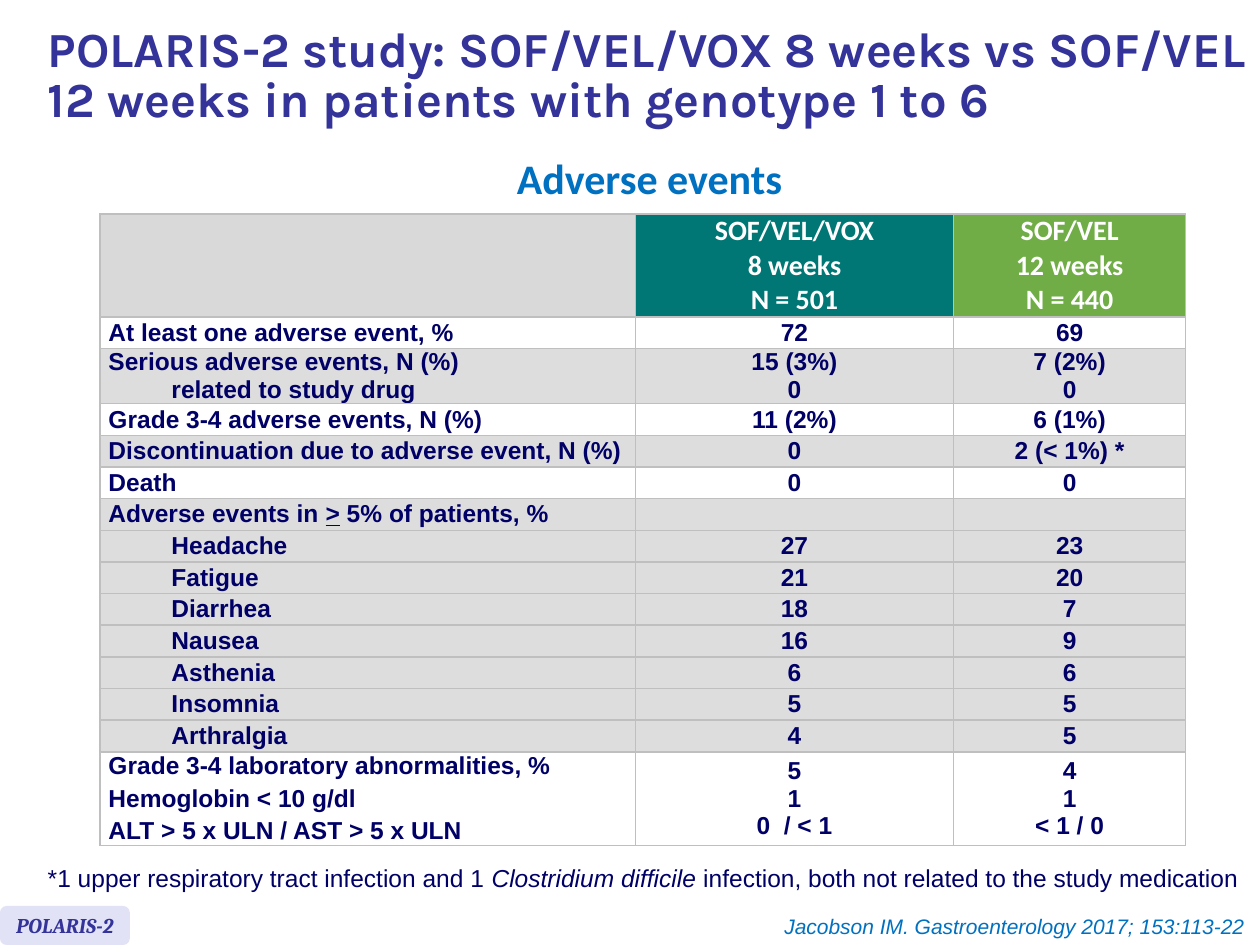
from lxml import etree
from pptx import Presentation
from pptx.dml.color import RGBColor
from pptx.enum import shapes, text
from pptx.oxml.ns import qn
from pptx.util import Pt

NAVY, INDIGO, BLUE, WHITE = "000066", "333399", "0070C0", "FFFFFF"
GREY, HEAD_GREY, BORDER = "DDDDDD", "D9D9D9", "BFBFBF"
LEFT, CENTER, RIGHT = text.PP_ALIGN.LEFT, text.PP_ALIGN.CENTER, text.PP_ALIGN.RIGHT

TITLE = "POLARIS-2 study: SOF/VEL/VOX 8 weeks vs SOF/VEL 12 weeks in patients with genotype 1 to 6"
SUBTITLE = "Adverse events"
FOOTNOTE = [
    "*1 upper respiratory tract infection and 1 ",
    ("Clostridium difficile", "italic"),
    " infection, both not related to the study medication",
]
STUDY = "POLARIS-2"
SOURCE = "Jacobson IM. Gastroenterology 2017; 153:113-22"

HEADER = [
    ([], HEAD_GREY),
    (["SOF/VEL/VOX", "8 weeks", "N = 501"], "007774"),
    (["SOF/VEL", "12 weeks", "N = 440"], "70AD47"),
]
SYMPTOMS = [
    ("Headache", "27", "23"),
    ("Fatigue", "21", "20"),
    ("Diarrhea", "18", "7"),
    ("Nausea", "16", "9"),
    ("Asthenia", "6", "6"),
    ("Insomnia", "5", "5"),
    ("Arthralgia", "4", "5"),
]
ROWS = [
    (WHITE, ["At least one adverse event, %"], ["72"], ["69"]),
    (GREY, ["Serious adverse events, N (%)", "\trelated to study drug"], ["15 (3%)", "0"], ["7 (2%)", "0"]),
    (WHITE, ["Grade 3-4 adverse events, N (%)"], ["11 (2%)"], ["6 (1%)"]),
    (GREY, ["Discontinuation due to adverse event, N (%)"], ["0"], ["2 (< 1%) *"]),
    (WHITE, ["Death"], ["0"], ["0"]),
    (GREY, [["Adverse events in ", (">", "underline"), " 5% of patients, %"]], [], []),
    *[(GREY, ["\t" + name], [a], [b]) for name, a, b in SYMPTOMS],
    (WHITE, ["Grade 3-4 laboratory abnormalities, %", "Hemoglobin < 10 g/dl",
             "ALT > 5 x ULN / AST > 5 x ULN"], ["5", "1", "0  / < 1"], ["4", "1", "< 1 / 0"]),
]
COL_WIDTHS = [306, 182, 132.5]
HEADER_HEIGHT = 58.6
ROW_HEIGHTS = {1: 18.1, 2: 31.4, 3: 53.5}


def rgb(value):
    return RGBColor.from_string(value)


def write(p, content, font, size, color, bold=False, italic=False, align=LEFT):
    p.alignment = align
    for part in [content] if isinstance(content, str) else content:
        words, style = part if isinstance(part, tuple) else (part, None)
        r = p.add_run()
        r.text = words
        f = r.font
        f.name, f.size, f.bold, f.italic = font, Pt(size), bold, italic
        f.color.rgb = rgb(color)
        if style:
            setattr(f, style, True)


def add_text(s, box, content, wrap, *style, **options):
    tf = s.shapes.add_textbox(*map(Pt, box)).text_frame
    tf.word_wrap = wrap
    tf.auto_size = text.MSO_AUTO_SIZE.SHAPE_TO_FIT_TEXT
    write(tf.paragraphs[0], content, *style, **options)
    return tf.paragraphs[0]


def format_cell(cell, fill, inset):
    tc_pr = cell._tc.get_or_add_tcPr()
    for side in ("lnL", "lnR", "lnT", "lnB"):
        ln = etree.SubElement(tc_pr, qn("a:" + side), w=str(Pt(1)))
        solid = etree.SubElement(ln, qn("a:solidFill"))
        etree.SubElement(solid, qn("a:srgbClr"), val=BORDER)
    cell.fill.solid()
    cell.fill.fore_color.rgb = rgb(fill)
    cell.vertical_anchor = text.MSO_ANCHOR.MIDDLE
    cell.margin_left = cell.margin_right = Pt(inset)
    cell.margin_top = cell.margin_bottom = 0


def fill_cell(cell, lines, font, size, color, align, gap=0):
    tf = cell.text_frame
    if not lines:
        tf.paragraphs[0]._p.get_or_add_endParaRPr().set("sz", str(size * 100))
    for i, line in enumerate(lines):
        p = tf.paragraphs[0] if i == 0 else tf.add_paragraph()
        if line[0] == "\t":
            line = line[1:]
            p.level = 1
            p._p.get_or_add_pPr().set("marL", str(Pt(36)))
        p.space_after = Pt(gap)
        write(p, line, font, size, color, bold=True, align=align)


def add_events_table(s):
    heights = [HEADER_HEIGHT] + [ROW_HEIGHTS[len(row[1])] for row in ROWS]
    table = s.shapes.add_table(len(heights), len(COL_WIDTHS), Pt(57), Pt(122.4),
                               Pt(sum(COL_WIDTHS)), Pt(sum(heights))).table
    table.horz_banding = False
    for column, width in zip(table.columns, COL_WIDTHS):
        column.width = Pt(width)
    for row, height in zip(table.rows, heights):
        row.height = Pt(height)
    for c, (lines, fill) in enumerate(HEADER):
        format_cell(table.cell(0, c), fill, 7.2)
        fill_cell(table.cell(0, c), lines, "Calibri", 16, WHITE, CENTER)
    for r, (fill, *cells) in enumerate(ROWS, 1):
        for c, lines in enumerate(cells):
            format_cell(table.cell(r, c), fill, 5)
            gap = 3 if c == 0 and len(lines) != 2 else 0
            fill_cell(table.cell(r, c), lines, "Arial", 14, NAVY, CENTER if c else LEFT, gap)


def add_study_tag(s):
    sp = s.shapes.add_shape(shapes.MSO_SHAPE.ROUNDED_RECTANGLE, 0, Pt(517.7), Pt(74.2), Pt(22.3))
    sp.shadow.inherit = False
    sp.fill.solid()
    sp.fill.fore_color.rgb = rgb("E2E2F6")
    sp.line.fill.background()
    tf = sp.text_frame
    tf.word_wrap = False
    tf.vertical_anchor = text.MSO_ANCHOR.MIDDLE
    write(tf.paragraphs[0], STUDY, "Cambria", 12, INDIGO, bold=True, italic=True, align=CENTER)


def add_title(s):
    title = s.shapes.title
    title.left, title.top, title.width, title.height = map(Pt, (20.2, 5.8, 708.5, 77))
    tf = title.text_frame
    tf.auto_size = text.MSO_AUTO_SIZE.NONE
    tf.vertical_anchor = text.MSO_ANCHOR.MIDDLE
    p = tf.paragraphs[0]
    p.line_spacing = 0.85
    write(p, TITLE, "Karla", 28, INDIGO, bold=True)


def main():
    prs = Presentation()
    prs.slide_width, prs.slide_height = Pt(720), Pt(540)
    s = prs.slides.add_slide(prs.slide_layouts[5])
    add_title(s)
    add_events_table(s)
    p = add_text(s, (287.3, 88.6, 167.8, 31.7), SUBTITLE, False, "Calibri", 24, BLUE, bold=True, align=CENTER)
    p.line_spacing = Pt(23.6)
    add_text(s, (20.2, 489.6, 698.4, 24.5), FOOTNOTE, True, "Arial", 14, NAVY)
    add_study_tag(s)
    add_text(s, (434.9, 518.4, 283.7, 21.6), SOURCE, False, "Arial", 12, BLUE, italic=True, align=RIGHT)
    prs.save("out.pptx")


if __name__ == "__main__":
    main()
